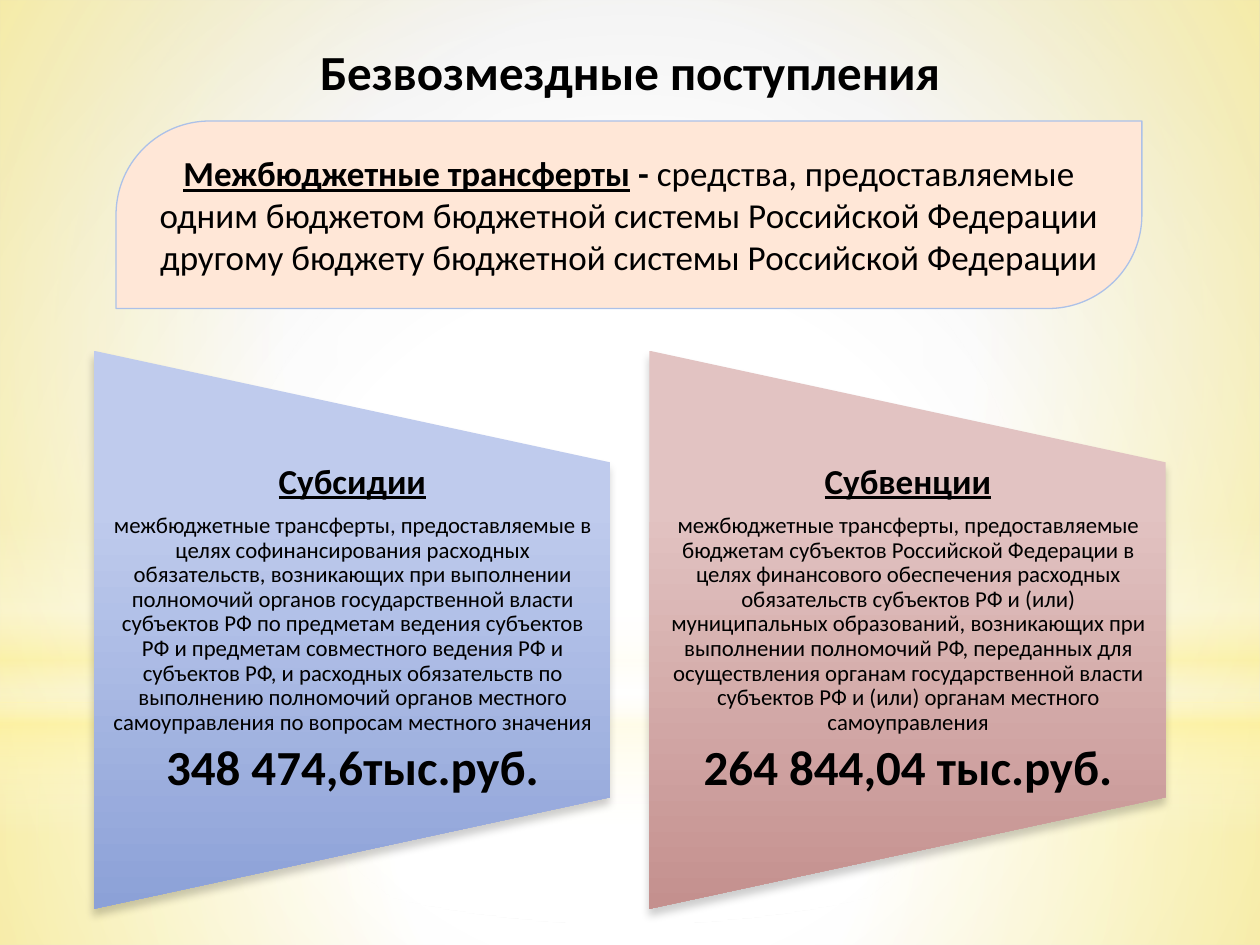
from lxml import etree
from pptx import Presentation
from pptx.dml.color import RGBColor
from pptx.enum.shapes import MSO_SHAPE
from pptx.enum.text import MSO_ANCHOR, MSO_AUTO_SIZE, PP_ALIGN
from pptx.oxml.ns import qn
from pptx.util import Cm, Pt

RECT = MSO_SHAPE.RECTANGLE
OVAL = MSO_SHAPE.OVAL
LEAF = MSO_SHAPE.ROUND_2_DIAG_RECTANGLE
WEDGE = MSO_SHAPE.FLOWCHART_MANUAL_OPERATION
CENTER = PP_ALIGN.CENTER
MIDDLE = MSO_ANCHOR.MIDDLE
NO_FIT = MSO_AUTO_SIZE.NONE

FONT = "Calibri"
HUES = {
    "text": "000000", "white": "FFFFFF", "gray": "D1D1D1", "yellow": "FFF39D",
    "peach": "FFE7D7", "edge": "ACC1E8",
    "blue": "BFCBED", "navy": "8CA1D7", "pink": "E2C3C2", "rose": "C4908E",
}
MID = (50, 50, 50, 50)

# Backdrop layers: shape, top, height, stops (place, colour, opacity), focus
LAYERS = [
    (RECT, 14.17, 4.88,
     [(0, "white", 91), (37, "white", 76), (100, "yellow", 79)], MID),
    (RECT, 0, 14.17,
     [(0, "white", 89), (48, "white", 62), (100, "yellow", 79)], MID),
    (RECT, 10.46, 6.35,
     [(0, "white", 0), (29, "white", 30), (45, "yellow", 40),
      (55, "white", 26), (65, "yellow", 60), (100, "white", 0)], None),
    (OVAL, 4.45, 14.17, [(0, "white", 100), (56, "white", 0)], MID),
]

# Cards: light colour, dark colour, heading, body, sum
CARDS = [
    ("blue", "navy", "Субсидии",
     "межбюджетные трансферты, предоставляемые в целях софинансирования "
     "расходных обязательств, возникающих при выполнении полномочий органов "
     "государственной власти субъектов РФ по предметам ведения субъектов РФ "
     "и предметам совместного ведения РФ и субъектов РФ, и расходных "
     "обязательств по выполнению полномочий органов местного самоуправления "
     "по вопросам местного значения",
     "348 474,6тыс.руб."),
    ("pink", "rose", "Субвенции",
     "межбюджетные трансферты, предоставляемые бюджетам субъектов Российской "
     "Федерации в целях финансового обеспечения расходных обязательств "
     "субъектов РФ и (или) муниципальных образований, возникающих при "
     "выполнении полномочий РФ, переданных для осуществления органам "
     "государственной власти субъектов РФ и (или) органам местного "
     "самоуправления",
     "264 844,04 тыс.руб."),
]


def color(name):
    return RGBColor.from_string(HUES[name])


def add_hue(node, name, alpha):
    hue = etree.SubElement(node, qn("a:srgbClr"), val=HUES[name])
    etree.SubElement(hue, qn("a:alpha"), val=str(alpha * 1000))


def blend(fill, node, stops, focus=None):
    """Fill with a gradient: round about focus, or from top to bottom."""
    fill.solid()
    grad = etree.Element(qn("a:gradFill"), rotWithShape="0")
    marks = etree.SubElement(grad, qn("a:gsLst"))
    for place, name, alpha in stops:
        stop = etree.SubElement(marks, qn("a:gs"), pos=str(place * 1000))
        add_hue(stop, name, alpha)
    if focus:
        way = etree.SubElement(grad, qn("a:path"))
        way.set("path", "circle")
        sides = {side: str(part * 1000) for side, part in zip("ltrb", focus)}
        etree.SubElement(way, qn("a:fillToRect"), sides)
    else:
        etree.SubElement(grad, qn("a:lin"), ang="5400000", scaled="0")
    node.replace(node.find(qn("a:solidFill")), grad)


def add_form(slide, kind, left, top, width, height):
    form = slide.shapes.add_shape(kind, Cm(left), Cm(top), Cm(width), Cm(height))
    form.shadow.inherit = False
    form.line.fill.background()
    return form


def style(para, size, bold=False, under=False):
    para.alignment = CENTER
    font = para.font
    font.name, font.size, font.bold = FONT, Pt(size), bold
    font.underline = under
    font.color.rgb = color("text")


def add_back(slide):
    back = slide.background.fill
    back.solid()
    node = next(slide.element.iter(qn("p:bgPr")))
    blend(back, node, [(0, "white", 100), (42, "white", 100), (100, "gray", 100)],
          (24, 44, 24, 12))
    for kind, top, height, stops, focus in LAYERS:
        form = add_form(slide, kind, 0, top, 25.4, height)
        blend(form.fill, form.element.spPr, stops, focus)


def add_title(slide, text):
    title = slide.shapes.title
    title.left, title.top = Cm(6.12), Cm(0.71)
    title.width, title.height = Cm(13.16), Cm(1.45)
    frame = title.text_frame
    frame.text = text
    frame.auto_size = NO_FIT
    frame.word_wrap = False
    frame.vertical_anchor = MIDDLE
    style(frame.paragraphs[0], 28, bold=True)


def add_term(slide, term, text):
    form = add_form(slide, LEAF, 2.34, 2.44, 20.68, 3.78)
    form.adjustments[0], form.adjustments[1] = 0.5, 0
    form.fill.solid()
    form.fill.fore_color.rgb = color("peach")
    form.line.color.rgb = color("edge")
    form.line.width = Pt(0.75)
    frame = form.text_frame
    frame.word_wrap = True
    frame.vertical_anchor = MIDDLE
    para = frame.paragraphs[0]
    style(para, 20)
    for part, bold, under in ((term, True, True), (" - ", True, False),
                              (text, False, False)):
        run = para.add_run()
        run.text = part
        run.font.bold, run.font.underline = bold, under


def add_shade(form):
    props = form.element.spPr
    cast = etree.SubElement(props.find(qn("a:effectLst")), qn("a:outerShdw"),
                            blurRad=str(Pt(5)), dist=str(Pt(4)),
                            dir="5400000", rotWithShape="0")
    add_hue(cast, "text", 20)


def add_card(slide, shift, light, dark, head, body, total):
    # Wedge turned so that its wide side is on the left
    form = add_form(slide, WEDGE, 1.47 + shift, 7.49, 11.25, 10.41)
    form.rotation = 270
    blend(form.fill, form.element.spPr, [(28, light, 100), (100, dark, 100)])
    add_shade(form)

    # Upright text
    box = slide.shapes.add_textbox(Cm(1.9 + shift), Cm(9.32), Cm(10.41), Cm(6.76))
    frame = box.text_frame
    frame.word_wrap = True
    frame.vertical_anchor = MIDDLE
    frame.margin_left = frame.margin_right = Cm(0.36)
    frame.margin_top = frame.margin_bottom = 0
    frame.text = "\n".join((head, body, total))
    looks = ((20, True, True, 7), (13, False, False, 4.5), (28, True, False, 0))
    for para, (size, bold, under, gap) in zip(frame.paragraphs, looks):
        style(para, size, bold, under)
        para.line_spacing = 0.9
        para.space_after = Pt(gap)


def main():
    deck = Presentation()
    deck.slide_width, deck.slide_height = Cm(25.4), Cm(19.05)
    slide = deck.slides.add_slide(deck.slide_layouts[5])
    add_back(slide)
    add_title(slide, "Безвозмездные поступления")
    # Bring the title in front of the backdrop
    slide.shapes.element.append(slide.shapes.title.element)
    add_term(slide, "Межбюджетные трансферты",
             "средства, предоставляемые одним бюджетом бюджетной системы "
             "Российской Федерации другому бюджету бюджетной системы "
             "Российской Федерации")
    for place, card in enumerate(CARDS):
        add_card(slide, place * 11.2, *card)
    deck.save("out.pptx")


if __name__ == "__main__":
    main()
